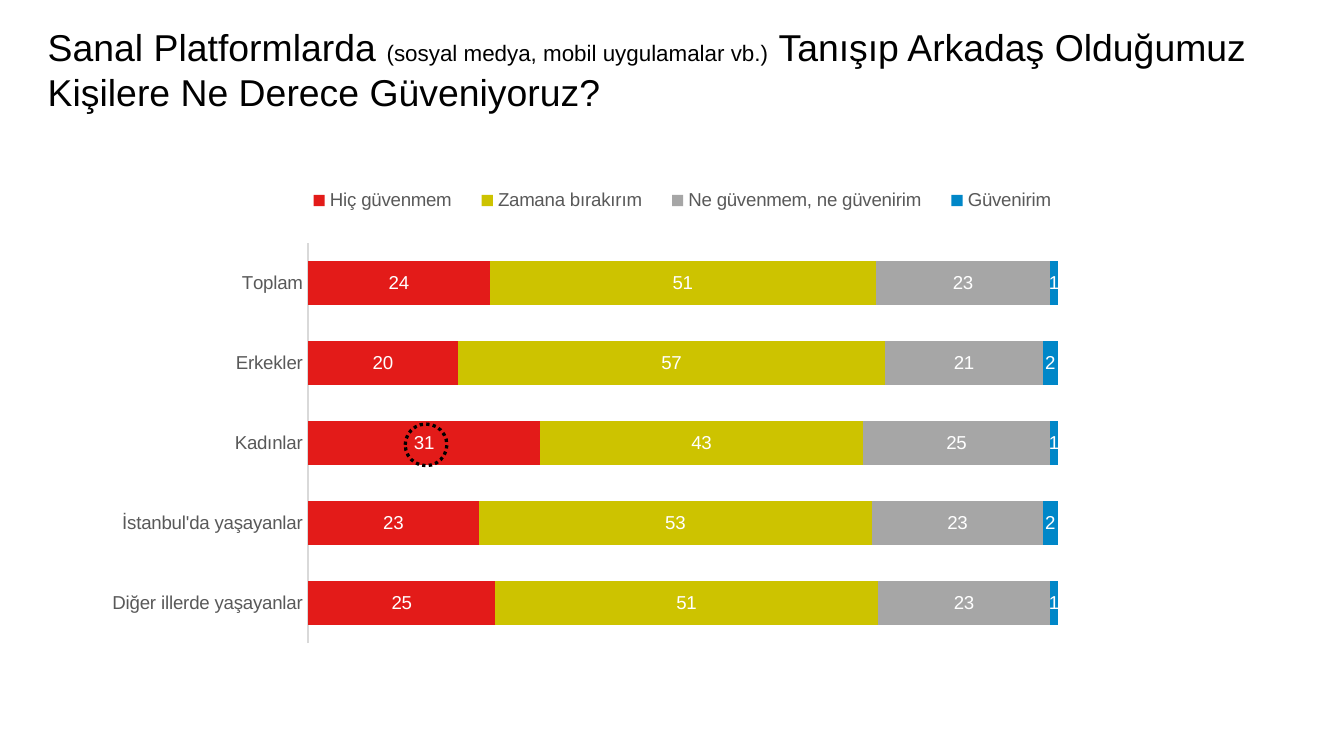
from dataclasses import dataclass
from typing import Any

from lxml.etree import SubElement
from pptx import Presentation
from pptx.chart.data import CategoryChartData
from pptx.dml.color import RGBColor
from pptx.enum.chart import (
    XL_CHART_TYPE as ChartType,
    XL_LABEL_POSITION as LabelPos,
    XL_LEGEND_POSITION as LegendPos,
    XL_TICK_LABEL_POSITION as TickLabelPos,
    XL_TICK_MARK as TickMark,
)
from pptx.enum.dml import MSO_LINE as Dash
from pptx.enum.shapes import MSO_SHAPE as Shape
from pptx.enum.text import MSO_ANCHOR as Anchor, MSO_AUTO_SIZE as AutoSize, PP_ALIGN as Align
from pptx.oxml import parse_xml
from pptx.oxml.ns import nsdecls, qn
from pptx.util import Emu, Pt

EMU_PER_PX = 4572  # 200 px to the inch
FONT = "Arial"
BLACK, WHITE, GREY, PALE_GREY = "000000", "FFFFFF", "595959", "D9D9D9"


@dataclass(frozen=True)
class Box:
    left: int
    top: int
    width: int
    height: int

    def emu(self) -> tuple[Emu, ...]:
        return tuple(map(px, (self.left, self.top, self.width, self.height)))


@dataclass(frozen=True)
class Answer:
    name: str
    color: str
    shares: tuple[int, ...]
    number_format: str = "#,##0"


@dataclass(frozen=True)
class TitlePart:
    text: str
    size: int


TITLE = (
    TitlePart("Sanal Platformlarda ", 20),
    TitlePart("(sosyal medya, mobil uygulamalar vb.)", 12),
    TitlePart(" Tanışıp Arkadaş Olduğumuz Kişilere Ne Derece Güveniyoruz?", 20),
)
GROUPS = ("Toplam", "Erkekler", "Kadınlar", "İstanbul'da yaşayanlar", "Diğer illerde yaşayanlar")
ANSWERS = (
    Answer("Hiç güvenmem", "E31B19", (24, 20, 31, 23, 25)),
    Answer("Zamana bırakırım", "CDC300", (51, 57, 43, 53, 51)),
    Answer("Ne güvenmem, ne güvenirim", "A6A6A6", (23, 21, 25, 23, 23)),
    Answer("Güvenirim", "0087C8", (1, 2, 1, 2, 1), "0"),
)


def px(length: int) -> Emu:
    return Emu(length * EMU_PER_PX)


def rgb(color: str) -> RGBColor:
    return RGBColor.from_string(color)


def apply(target: Any, formats: dict[str, Any]) -> None:
    for attribute, value in formats.items():
        setattr(target, attribute, value)


def style_font(font: Any, size: int, color: str) -> None:
    apply(font, {"name": FONT, "size": Pt(size), "bold": False})
    font.color.rgb = rgb(color)


def place_inside(part: Any, index: int, fractions: dict[str, float], inner: bool = False) -> None:
    """Give a plot area or legend a manual layout, in fractions of the chart."""
    previous = part.find(qn("c:layout"))
    if previous is not None:
        part.remove(previous)
    layout = parse_xml(f"<c:layout {nsdecls('c')}/>")
    manual = SubElement(layout, qn("c:manualLayout"))
    settings: dict[str, Any] = {"layoutTarget": "inner"} if inner else {}
    settings |= {"xMode": "edge", "yMode": "edge"} | fractions
    for tag, value in settings.items():
        SubElement(manual, qn(f"c:{tag}")).set("val", str(value))
    part.insert(index, layout)


def fill_title(title: Any, box: Box) -> None:
    apply(title, dict(zip(("left", "top", "width", "height"), box.emu())))
    frame = title.text_frame
    apply(frame, {
        "margin_left": 0, "margin_top": 0, "margin_right": 0, "margin_bottom": 0,
        "vertical_anchor": Anchor.BOTTOM, "word_wrap": True, "auto_size": AutoSize.NONE,
    })
    paragraph = frame.paragraphs[0]
    apply(paragraph, {"alignment": Align.LEFT, "space_before": Pt(0)})
    for part in TITLE:
        run = paragraph.add_run()
        run.text = part.text
        style_font(run.font, part.size, BLACK)


def draw_trust_chart(slide: Any, box: Box) -> None:
    trust = CategoryChartData(number_format="0")
    trust.categories = GROUPS
    for answer in ANSWERS:
        trust.add_series(answer.name, answer.shares)
    chart = slide.shapes.add_chart(ChartType.BAR_STACKED_100, *box.emu(), trust).chart
    chart.has_title = False
    style_font(chart.font, 10, BLACK)

    # Bars and their values
    bars = chart.plots[0]
    apply(bars, {"gap_width": 82, "overlap": 100, "vary_by_categories": False})
    for series, answer in zip(bars.series, ANSWERS):
        series.format.fill.solid()
        series.format.fill.fore_color.rgb = rgb(answer.color)
        series.format.line.fill.background()
        apply(series.data_labels, {
            "show_value": True, "number_format": answer.number_format,
            "number_format_is_linked": False, "position": LabelPos.CENTER,
        })
        style_font(series.data_labels.font, 10, WHITE)

    # Axes
    groups = chart.category_axis
    apply(groups, {
        "reverse_order": True, "has_major_gridlines": False,
        "major_tick_mark": TickMark.NONE, "minor_tick_mark": TickMark.NONE,
        "tick_label_position": TickLabelPos.NEXT_TO_AXIS,
    })
    style_font(groups.tick_labels.font, 10, GREY)
    groups.format.line.color.rgb = rgb(PALE_GREY)
    groups.format.line.width = Pt(0.75)
    apply(chart.value_axis, {
        "visible": False, "has_major_gridlines": False,
        "major_tick_mark": TickMark.NONE, "minor_tick_mark": TickMark.NONE,
    })

    # Legend above the bars
    chart.has_legend = True
    apply(chart.legend, {"position": LegendPos.TOP, "include_in_layout": False})
    style_font(chart.legend.font, 10, GREY)
    plot_area = bars._element.getparent()
    place_inside(plot_area, 0, {"x": 0.297, "y": 0.205, "w": 0.687, "h": 0.756}, inner=True)
    place_inside(chart.legend._element, 1, {"x": 0.28, "y": 0.08, "w": 0.72, "h": 0.09})


def draw_highlight(slide: Any, box: Box) -> None:
    ring = slide.shapes.add_shape(Shape.OVAL, *box.emu())
    ring.shadow.inherit = False
    ring.fill.background()
    ring.line.color.rgb = rgb(BLACK)
    apply(ring.line, {"width": Pt(1.75), "dash_style": Dash.ROUND_DOT})


def main() -> None:
    deck = Presentation()
    apply(deck, {"slide_width": px(2000), "slide_height": px(1125)})
    slide = deck.slides.add_slide(deck.slide_layouts.get_by_name("Title Only"))
    fill_title(slide.shapes.title, Box(71, 43, 1874, 126))
    draw_trust_chart(slide, Box(-24, 200, 1624, 788))
    draw_highlight(slide, Box(603, 631, 62, 62))
    deck.save("out.pptx")


if __name__ == "__main__":
    main()
